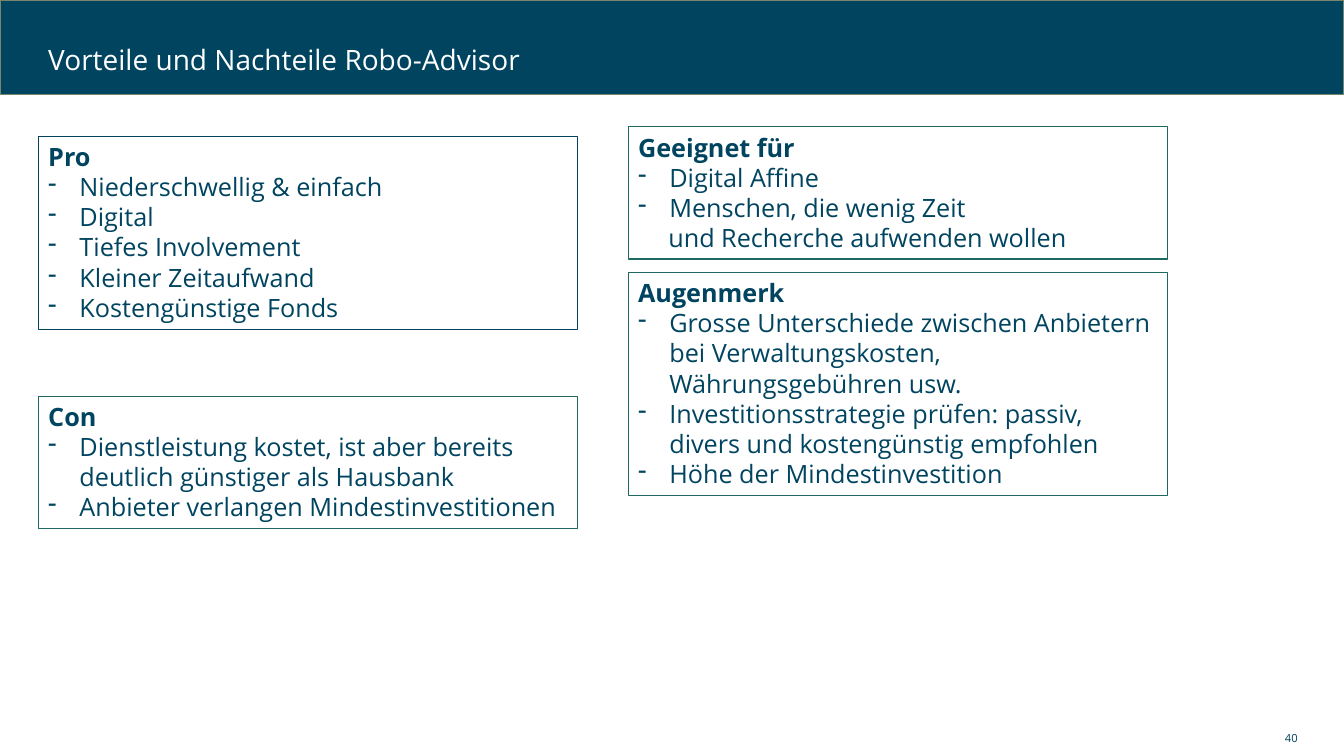
from lxml import etree
from pptx import Presentation
from pptx.dml.color import RGBColor
from pptx.enum.shapes import MSO_SHAPE
from pptx.enum.text import MSO_ANCHOR, MSO_AUTO_SIZE, PP_ALIGN
from pptx.oxml.ns import qn
from pptx.util import Inches, Pt

RECTANGLE = MSO_SHAPE.RECTANGLE
TOP, MIDDLE = MSO_ANCHOR.TOP, MSO_ANCHOR.MIDDLE
LEFT, RIGHT = PP_ALIGN.LEFT, PP_ALIGN.RIGHT
GROW = MSO_AUTO_SIZE.SHAPE_TO_FIT_TEXT

PETROL = RGBColor(0x00, 0x44, 0x60)
GREEN = RGBColor(0x1E, 0x6A, 0x62)
OLIVE = RGBColor(0x7A, 0x86, 0x6C)
WHITE = RGBColor(0xFF, 0xFF, 0xFF)
FONT = "Open Sans"

WIDTH, HEIGHT = Inches(13.33), Inches(7.5)
HANGING = Inches(0.31)
CONTINUATION = Inches(0.3)
COLUMN_LEFT, COLUMN_STEP, COLUMN_WIDTH = 2.85, 43.89, 40.13

CARDS = [
    (0, 18, 25.6, PETROL, 0.25, "Pro", [
        "Niederschwellig & einfach", "Digital", "Tiefes Involvement",
        "Kleiner Zeitaufwand", "Kostengünstige Fonds"], None),
    (0, 52.4, 17.47, GREEN, 0.75, "Con", [
        "Dienstleistung kostet, ist aber bereits deutlich günstiger als Hausbank",
        "Anbieter verlangen Mindestinvestitionen"], None),
    (1, 16.8, 17.47, GREEN, 0.75, "Geeignet für", [
        "Digital Affine", "Menschen, die wenig Zeit"],
        "und Recherche aufwenden wollen"),
    (1, 36, 29.6, GREEN, 0.75, "Augenmerk", [
        "Grosse Unterschiede zwischen Anbietern bei Verwaltungskosten, "
        "Währungsgebühren usw.",
        "Investitionsstrategie prüfen: passiv, divers und kostengünstig empfohlen",
        "Höhe der Mindestinvestition"], None),
]


def share(left, top, width, height):
    """Turn percentages of the slide's size into a box in EMU."""
    return (round(WIDTH * left / 100), round(HEIGHT * top / 100),
            round(WIDTH * width / 100), round(HEIGHT * height / 100))


def style(paragraph, size, color, bold=False):
    """Set the font of a whole paragraph."""
    font = paragraph.font
    font.name, font.size, font.bold = FONT, Pt(size), bold
    font.color.rgb = color


def indent(paragraph, margin, first_line, bullet=None):
    """Indent a paragraph and give it an optional bullet."""
    properties = paragraph._p.get_or_add_pPr()
    properties.set("marL", str(margin))
    properties.set("indent", str(first_line))
    if bullet:
        etree.SubElement(properties, qn("a:buChar")).set("char", bullet)


def add_rectangle(slide, box, line_color, line_width):
    """Draw an unfilled, outlined rectangle."""
    rectangle = slide.shapes.add_shape(RECTANGLE, *box)
    rectangle.shadow.inherit = False
    rectangle.fill.background()
    rectangle.line.color.rgb = line_color
    rectangle.line.width = Pt(line_width)
    return rectangle


def add_label(slide, box, text, size, color, align, line_spacing):
    """Place a single vertically centred line of text."""
    frame = slide.shapes.add_textbox(*box).text_frame
    frame.word_wrap = True
    frame.vertical_anchor = MIDDLE
    paragraph = frame.paragraphs[0]
    paragraph.text = text
    paragraph.alignment = align
    paragraph.line_spacing = line_spacing
    style(paragraph, size, color)


def add_header(slide, box, title):
    """Draw the coloured band with the slide title in it."""
    band = add_rectangle(slide, box, OLIVE, 1)
    band.fill.solid()
    band.fill.fore_color.rgb = PETROL
    left, top, width, height = box
    title_box = (left + round(width * 0.0285), top + round(height * 0.36),
                 round(width * 0.83), round(height * 0.57))
    add_label(slide, title_box, title, 20, WHITE, LEFT, 0.9)


def add_card(slide, box, line_color, line_width, heading, points, continuation):
    """Draw an outlined card with a bold heading and dashed points."""
    frame = add_rectangle(slide, box, line_color, line_width).text_frame
    frame.word_wrap = True
    frame.auto_size = GROW
    frame.vertical_anchor = TOP
    first = frame.paragraphs[0]
    first.text = heading
    first.alignment = LEFT
    style(first, 18, PETROL, bold=True)
    for point in points:
        paragraph = frame.add_paragraph()
        paragraph.text = point
        paragraph.alignment = LEFT
        indent(paragraph, HANGING, -HANGING, "-")
        style(paragraph, 18, PETROL)
    if continuation:
        paragraph = frame.add_paragraph()
        paragraph.text = continuation
        paragraph.alignment = LEFT
        indent(paragraph, 0, CONTINUATION)
        style(paragraph, 18, PETROL)


def main():
    """Build and save the slide."""
    presentation = Presentation()
    presentation.slide_width, presentation.slide_height = WIDTH, HEIGHT
    slide = presentation.slides.add_slide(presentation.slide_layouts[6])
    add_header(slide, share(0, 0, 100, 12.53), "Vorteile und Nachteile Robo-Advisor")
    add_label(slide, share(70.67, 96, 26.63, 3.2), "40", 8, PETROL, RIGHT, 1.0)
    for column, top, height, *content in CARDS:
        left = COLUMN_LEFT + column * COLUMN_STEP
        add_card(slide, share(left, top, COLUMN_WIDTH, height), *content)
    presentation.save("out.pptx")


if __name__ == "__main__":
    main()
